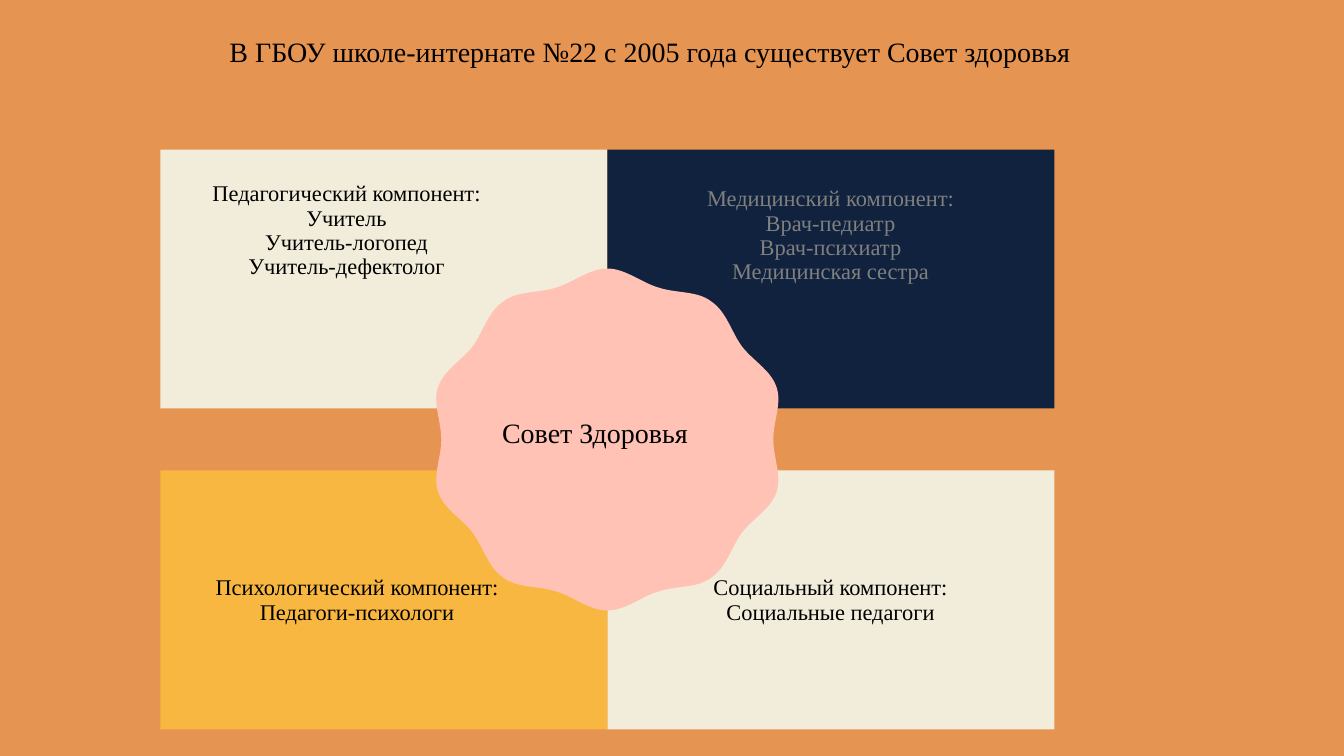
from lxml.etree import SubElement
from pptx import Presentation
from pptx.dml.color import RGBColor
from pptx.enum.text import MSO_ANCHOR, MSO_AUTO_SIZE, PP_ALIGN
from pptx.oxml.ns import qn
from pptx.util import Inches, Pt

WIDTH, HEIGHT = 1344, 756
PX = Inches(20) / WIDTH

TITLE = "В ГБОУ школе-интернате №22 с 2005 года существует Совет здоровья"
BACKGROUND, BLACK = "E69451", "000000"
CENTER_X, CENTER_Y = 607.3, 439.5
PANEL_WIDTH, PANEL_TOP, PANEL_BOTTOM = 447, 31, 290
POINTER_HALF = 13

COMPONENTS = [
    dict(side=(-1, -1), pointer=516, fill="F2EDDB", color=BLACK, box=(123, 182, 447, 98),
         lines=["Педагогический компонент:", "Учитель", "Учитель-логопед", "Учитель-дефектолог"]),
    dict(side=(1, -1), pointer=684, fill="10223D", color="808080", box=(607, 187, 447, 98),
         lines=["Медицинский компонент:", "Врач-педиатр", "Врач-психиатр", "Медицинская сестра"]),
    dict(side=(1, 1), pointer=698, fill="F2EDDB", color=BLACK, box=(656, 576, 349, 49),
         lines=["Социальный компонент:", "Социальные педагоги"]),
    dict(side=(-1, 1), pointer=531, fill="F8B740", color=BLACK, box=(160, 576, 394, 49),
         lines=["Психологический компонент:", "Педагоги-психологи"]),
]

BADGE = dict(text="Совет Здоровья", fill="FFC2B4", box=(500, 417, 190, 32))
BADGE_QUARTER = [
    (166, 0), (166, -18), (175, -37), (169, -53), (163, -70), (144, -80), (134, -94), (124, -108),
    (119, -128), (104, -138), (90, -149), (69, -146), (51, -152), (34, -157), (18, -171), (0, -171),
]


def emu(length):
    return round(length * PX)


def rgb(value):
    return RGBColor.from_string(value)


def add_outline(page, points, fill):
    points = [(emu(x), emu(y)) for x, y in points]
    builder = page.shapes.build_freeform(*points[0], scale=1.0)
    builder.add_line_segments(points[1:], close=True)
    shape = builder.convert_to_shape()
    shape.shadow.inherit = False
    shape.fill.solid()
    shape.fill.fore_color.rgb = rgb(fill)
    shape.line.fill.background()
    return shape


def panel_points(side, pointer):
    across, down = side
    outer = CENTER_X + across * PANEL_WIDTH
    near, far = CENTER_Y + down * PANEL_TOP, CENTER_Y + down * PANEL_BOTTOM
    return [
        (outer, far), (outer, near),
        (pointer + across * POINTER_HALF, near),
        (pointer, CENTER_Y),
        (pointer - across * POINTER_HALF, near),
        (CENTER_X, near), (CENTER_X, far),
    ]


def badge_points():
    upper = BADGE_QUARTER + [(-x, y) for x, y in reversed(BADGE_QUARTER[:-1])]
    whole = upper + [(x, -y) for x, y in reversed(upper[:-1])]
    return [(CENTER_X + x, CENTER_Y + y) for x, y in whole]


def curve_outline(shape):
    outline = next(shape.element.iter(qn("a:path")))
    lines = outline.findall(qn("a:lnTo"))
    close = outline.find(qn("a:close"))
    for start in range(0, len(lines), 3):
        curve = SubElement(outline, qn("a:cubicBezTo"))
        for line in lines[start:start + 3]:
            curve.append(line[0])
            outline.remove(line)
    outline.append(close)


def write_text(box, lines, *, place, size, spacing, color=BLACK):
    box.left, box.top, box.width, box.height = map(emu, place)
    frame = box.text_frame
    frame.margin_left = frame.margin_top = frame.margin_right = frame.margin_bottom = 0
    frame.word_wrap = True
    frame.auto_size = MSO_AUTO_SIZE.SHAPE_TO_FIT_TEXT
    frame.vertical_anchor = MSO_ANCHOR.TOP
    for index, line in enumerate(lines):
        para = frame.add_paragraph() if index else frame.paragraphs[0]
        para.alignment = PP_ALIGN.CENTER
        para.line_spacing = Pt(spacing)
        span = para.add_run()
        span.text = line
        span.font.name = "Times New Roman"
        span.font.size = Pt(size)
        span.font.color.rgb = rgb(color)


def main():
    deck = Presentation()
    deck.slide_width, deck.slide_height = emu(WIDTH), emu(HEIGHT)
    page = deck.slides.add_slide(deck.slide_layouts[5])
    page.background.fill.solid()
    page.background.fill.fore_color.rgb = rgb(BACKGROUND)

    write_text(page.shapes.title, [TITLE], place=(0, 26, 1300, 38), size=30, spacing=44.8)

    for part in COMPONENTS:
        add_outline(page, panel_points(part["side"], part["pointer"]), part["fill"])
    curve_outline(add_outline(page, badge_points(), BADGE["fill"]))

    for part in COMPONENTS:
        write_text(page.shapes.add_textbox(0, 0, 0, 0), part["lines"], place=part["box"],
                   size=24, spacing=26, color=part["color"])
    write_text(page.shapes.add_textbox(0, 0, 0, 0), [BADGE["text"]], place=BADGE["box"],
               size=30, spacing=34)

    deck.save("out.pptx")


if __name__ == "__main__":
    main()
